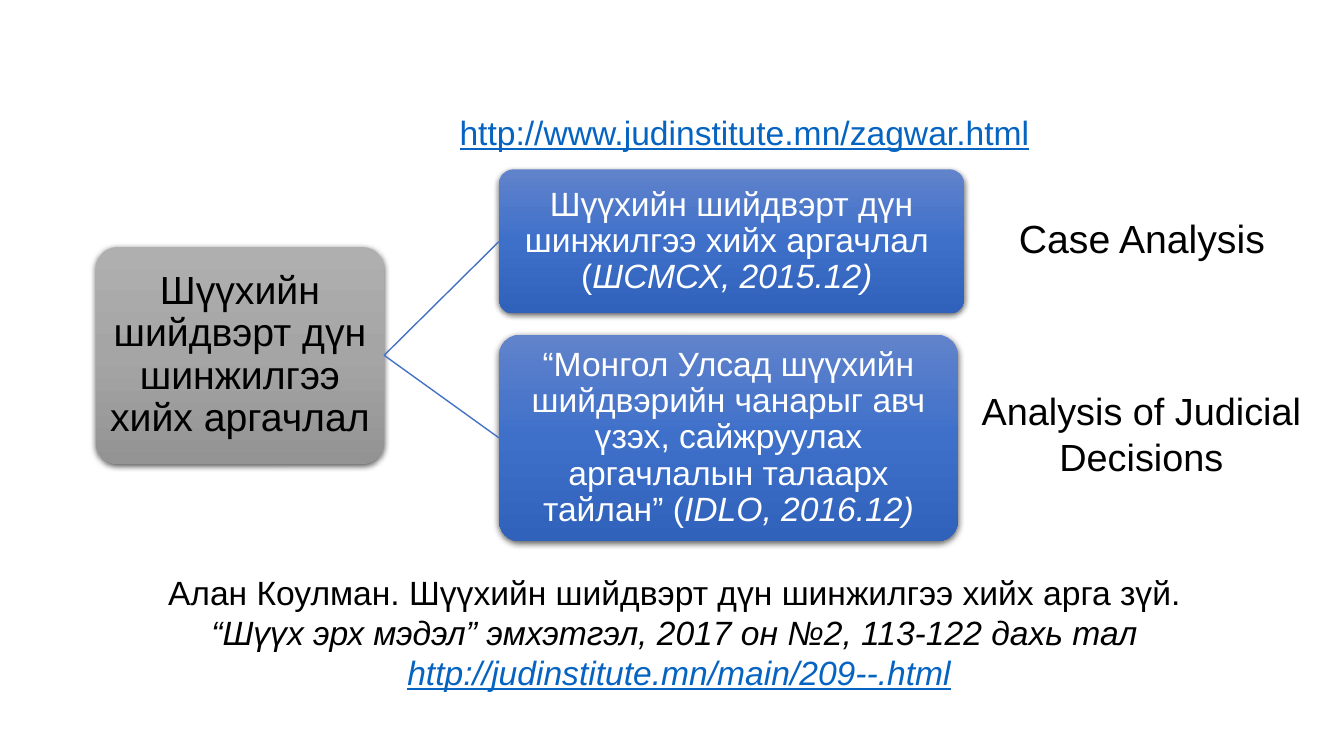
from copy import deepcopy

from lxml import etree
from pptx import Presentation
from pptx.dml.color import RGBColor
from pptx.enum import shapes, text
from pptx.oxml import ns
from pptx.util import Inches, Pt

BLACK = RGBColor(0x00, 0x00, 0x00)
WHITE = RGBColor(0xFF, 0xFF, 0xFF)
LINK = RGBColor(0x05, 0x63, 0xC1)
BRANCH = RGBColor(0x44, 0x72, 0xC4)
GREYS = (RGBColor(0xAF, 0xAF, 0xAF), RGBColor(0xA5, 0xA5, 0xA5), RGBColor(0x93, 0x93, 0x93))
BLUES = (RGBColor(0x61, 0x83, 0xCB), RGBColor(0x3E, 0x70, 0xCA), RGBColor(0x30, 0x62, 0xBB))


def add_run(paragraph, wording, size=24, color=BLACK, italic=False, underline=False):
    run = paragraph.add_run()
    run.text = wording
    run.font.name = "Arial"
    run.font.size = Pt(size)
    run.font.color.rgb = color
    run.font.italic = italic
    run.font.underline = underline


def fill_gradient(shape, colors):
    shape.fill.gradient()
    shape.fill.gradient_angle = 270
    stops = shape._element.spPr.find(".//" + ns.qn("a:gsLst"))
    stops.append(deepcopy(stops[-1]))
    for stop, position, color in zip(shape.fill.gradient_stops, (0, 0.5, 1), colors):
        stop.position = position
        stop.color.rgb = color


def cast_shadow(shape):
    shape.shadow.inherit = False
    effects = shape._element.spPr.find(ns.qn("a:effectLst"))
    shadow = etree.SubElement(effects, ns.qn("a:outerShdw"), blurRad=str(Pt(4.5)),
                              dist=str(Pt(1.5)), dir="5400000", algn="ctr", rotWithShape="0")
    tone = etree.SubElement(shadow, ns.qn("a:srgbClr"), val="000000")
    etree.SubElement(tone, ns.qn("a:alpha"), val="63000")


def add_card(slide, left, top, width, height, colors, wording, source="", **style):
    card = slide.shapes.add_shape(shapes.MSO_SHAPE.ROUNDED_RECTANGLE, Inches(left),
                                  Inches(top), Inches(width), Inches(height))
    card.adjustments[0] = 0.1
    fill_gradient(card, colors)
    card.line.fill.background()
    cast_shadow(card)
    frame = card.text_frame
    frame.word_wrap = True
    frame.vertical_anchor = text.MSO_ANCHOR.MIDDLE
    frame.margin_left = frame.margin_right = Inches(0.08)
    frame.margin_top = frame.margin_bottom = Inches(0.08)
    paragraph = frame.paragraphs[0]
    paragraph.alignment = text.PP_ALIGN.CENTER
    paragraph.line_spacing = 0.9
    add_run(paragraph, wording, **style)
    if source:
        add_run(paragraph, source, italic=True, **style)
    return card


def add_label(slide, left, top, width, height, *lines, align=text.PP_ALIGN.CENTER):
    frame = slide.shapes.add_textbox(Inches(left), Inches(top),
                                     Inches(width), Inches(height)).text_frame
    frame.word_wrap = True
    frame.auto_size = text.MSO_AUTO_SIZE.SHAPE_TO_FIT_TEXT
    for index, (wording, style) in enumerate(lines):
        paragraph = frame.add_paragraph() if index else frame.paragraphs[0]
        paragraph.alignment = align
        add_run(paragraph, wording, **style)


def add_branch(slide, topic, method):
    branch = slide.shapes.add_connector(shapes.MSO_CONNECTOR.STRAIGHT, 0, 0, 0, 0)
    branch.begin_connect(topic, 3)
    branch.end_connect(method, 1)
    branch.line.color.rgb = BRANCH
    branch.line.width = Pt(1)
    etree.SubElement(branch._element.spPr, ns.qn("a:effectLst"))


def main():
    deck = Presentation()
    deck.slide_width, deck.slide_height = Inches(13.33), Inches(7.5)
    slide = deck.slides.add_slide(deck.slide_layouts[6])

    topic = add_card(slide, 0.95, 2.45, 2.86, 2.15, GREYS,
                     "Шүүхийн шийдвэрт дүн шинжилгээ хийх аргачлал", size=28)
    guide = add_card(slide, 4.95, 1.68, 4.61, 1.43, BLUES,
                     "Шүүхийн шийдвэрт дүн шинжилгээ хийх аргачлал  (",
                     "ШСМСХ, 2015.12) ", color=WHITE)
    report = add_card(slide, 4.95, 3.32, 4.55, 2.05, BLUES,
                      "“Монгол Улсад шүүхийн шийдвэрийн чанарыг авч үзэх, "
                      "сайжруулах аргачлалын талаарх тайлан” (",
                      "IDLO, 2016.12)", color=WHITE)
    for method in (guide, report):
        add_branch(slide, topic, method)

    link = dict(color=LINK, underline=True)
    add_label(slide, 4.46, 1.06, 5.96, 0.5,
              ("http://www.judinstitute.mn/zagwar.html", link), align=text.PP_ALIGN.LEFT)
    add_label(slide, 1.04, 5.62, 11.39, 1.31,
              ("Алан Коулман. Шүүхийн шийдвэрт дүн шинжилгээ хийх арга зүй. ", {}),
              ("“Шүүх эрх мэдэл” эмхэтгэл, 2017 он №2, 113-122 дахь тал ", dict(italic=True)),
              ("http://judinstitute.mn/main/209--.html", dict(link, italic=True)))
    add_label(slide, 9.61, 3.8, 3.42, 1.51, ("Analysis of Judicial Decisions", dict(size=27)))
    add_label(slide, 9.81, 2.08, 3.03, 0.57, ("Case Analysis", dict(size=28)))

    deck.save("out.pptx")


if __name__ == "__main__":
    main()
